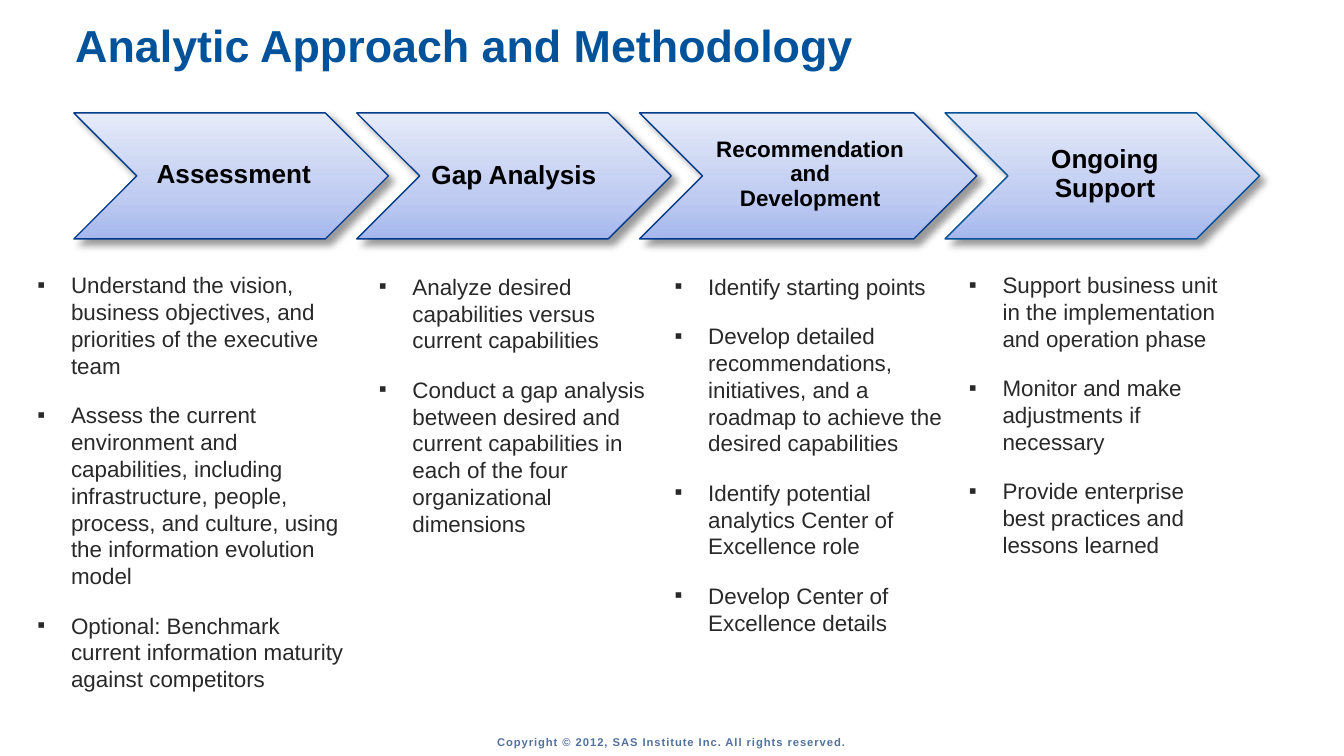
"""Build the analytic approach and methodology slide."""
from lxml.etree import SubElement
from pptx import Presentation
from pptx.dml.color import RGBColor
from pptx.enum.shapes import MSO_SHAPE
from pptx.enum.text import MSO_ANCHOR, MSO_AUTO_SIZE, PP_ALIGN
from pptx.oxml import parse_xml
from pptx.oxml.ns import nsdecls, qn
from pptx.util import Pt

TITLE = "Analytic Approach and Methodology"
COPYRIGHT = "Copyright © 2012, SAS Institute Inc. All rights reserved."

BLUE = RGBColor(0x00, 0x53, 0x9B)
NAVY = RGBColor(0x00, 0x3A, 0x8A)
EDGE = RGBColor(0x00, 0x51, 0x98)
BLACK = RGBColor(0x00, 0x00, 0x00)
GREY = RGBColor(0x29, 0x29, 0x29)
SLATE = RGBColor(0x52, 0x71, 0x9E)
GRADIENT = [(0, "A5B7ED"), (35, "C0CCF1"), (100, "E6EBFA")]

STAGES = [
    dict(label=["Assessment"], size=14, width=168.5, line=NAVY,
         margins=(4.3, 0, 1.4, 1.4), text_width=182.9, text_top=141.8, points=[
             "Understand the vision, business objectives, and priorities of the executive team",
             "Assess the current environment and capabilities, including infrastructure, people, "
             "process, and culture, using the information evolution model",
             "Optional: Benchmark current information maturity against competitors"]),
    dict(label=["Gap Analysis"], size=14, width=168.5, line=NAVY,
         margins=(0, 0, 0, 0), text_width=158.4, text_top=142.6, points=[
             "Analyze desired capabilities versus current capabilities",
             "Conduct a gap analysis between desired and current capabilities in each of "
             "the four organizational dimensions"]),
    dict(label=["Recommendation", "and", "Development"], size=12, width=180.7, line=NAVY,
         margins=(3.6, 0, 1.4, 1.4), text_width=157.7, text_top=142.6, points=[
             "Identify starting points",
             "Develop detailed recommendations, initiatives, and a roadmap to achieve "
             "the desired capabilities",
             "Identify potential analytics Center of Excellence role",
             "Develop Center of Excellence details"]),
    dict(label=["Ongoing Support"], size=14, width=168.5, line=EDGE,
         margins=(4.3, 0, 1.4, 1.4), text_width=149.8, text_top=141.8, points=[
             "Support business unit in the implementation and operation phase",
             "Monitor and make adjustments if necessary",
             "Provide enterprise best practices and lessons learned"]),
]

CHEVRON_LEFT, CHEVRON_TOP, CHEVRON_HEIGHT, OVERLAP = 39.6, 60.5, 67.5, 17
TEXT_LEFT, TEXT_BOTTOM, INDENT = 13, 376, 18


def add_run(p, text, size, color, bold=False):
    r = p.add_run()
    r.text = text
    r.font.name, r.font.size, r.font.bold = "Arial", Pt(size), bold
    r.font.color.rgb = color
    return r


def style_chevron(sp, line):
    sp.line.color.rgb = line
    sp.line.width = Pt(0.75)
    stops = "".join(f'<a:gs pos="{pos * 1000}"><a:srgbClr val="{rgb}"/></a:gs>'
                    for pos, rgb in GRADIENT)
    fill = parse_xml(f'<a:gradFill {nsdecls("a")} rotWithShape="1"><a:gsLst>{stops}</a:gsLst>'
                     '<a:lin ang="16200000" scaled="0"/></a:gradFill>')
    shadow = parse_xml(f'<a:effectLst {nsdecls("a")}><a:outerShdw blurRad="{Pt(4)}" '
                       f'dist="{Pt(4)}" dir="2700000" algn="tl" rotWithShape="0">'
                       '<a:srgbClr val="000000"><a:alpha val="40000"/></a:srgbClr>'
                       '</a:outerShdw></a:effectLst>')
    props = sp._element.spPr
    props.find(qn("a:ln")).addprevious(fill)
    props.append(shadow)


def add_chevron(s, stage, left):
    sp = s.shapes.add_shape(MSO_SHAPE.CHEVRON, Pt(left), Pt(CHEVRON_TOP),
                            Pt(stage["width"]), Pt(CHEVRON_HEIGHT))
    style_chevron(sp, stage["line"])
    tf = sp.text_frame
    tf.word_wrap = True
    tf.vertical_anchor = MSO_ANCHOR.MIDDLE
    tf.margin_left, tf.margin_top, tf.margin_right, tf.margin_bottom = map(Pt, stage["margins"])
    p = tf.paragraphs[0]
    p.alignment, p.line_spacing = PP_ALIGN.CENTER, 0.9
    for i, text in enumerate(stage["label"]):
        if i:
            p.add_line_break()
        add_run(p, text, stage["size"], BLACK, bold=True)


def add_points(s, stage, left):
    top = stage["text_top"]
    tf = s.shapes.add_textbox(Pt(left), Pt(top), Pt(stage["text_width"]),
                              Pt(TEXT_BOTTOM - top)).text_frame
    tf.word_wrap = True
    for i, text in enumerate(stage["points"]):
        p = tf.add_paragraph() if i else tf.paragraphs[0]
        props = p._p.get_or_add_pPr()
        props.set("marL", str(Pt(INDENT)))
        props.set("indent", str(-Pt(INDENT)))
        SubElement(props, qn("a:buFont")).set("typeface", "Arial")
        SubElement(props, qn("a:buChar")).set("char", "▪")
        p.space_after = Pt(12)
        add_run(p, text, 12, GREY)


def add_title(s):
    sp = s.shapes.title
    sp.left, sp.top, sp.width, sp.height = Pt(33.1), Pt(15.8), Pt(515), Pt(26.6)
    tf = sp.text_frame
    tf.word_wrap = True
    tf.auto_size = MSO_AUTO_SIZE.NONE
    tf.vertical_anchor = MSO_ANCHOR.MIDDLE
    p = tf.paragraphs[0]
    p.alignment, p.line_spacing = PP_ALIGN.LEFT, Pt(18.8)
    add_run(p, TITLE, 24, BLUE, bold=True)


def add_copyright(s):
    tf = s.shapes.add_textbox(Pt(236), Pt(386.6), Pt(247), Pt(21.6)).text_frame
    tf.word_wrap = True
    tf.vertical_anchor = MSO_ANCHOR.MIDDLE
    p = tf.paragraphs[0]
    p.alignment = PP_ALIGN.CENTER
    r = add_run(p, COPYRIGHT, 6, SLATE, bold=True)
    r.font._element.set("spc", "50")


def main():
    prs = Presentation()
    prs.slide_width, prs.slide_height = Pt(720), Pt(405)
    s = prs.slides.add_slide(prs.slide_layouts[5])
    add_title(s)
    chevron_left, text_left = CHEVRON_LEFT, TEXT_LEFT
    for stage in STAGES:
        add_chevron(s, stage, chevron_left)
        add_points(s, stage, text_left)
        chevron_left += stage["width"] - OVERLAP
        text_left += stage["text_width"]
    add_copyright(s)
    prs.save("out.pptx")


if __name__ == "__main__":
    main()
